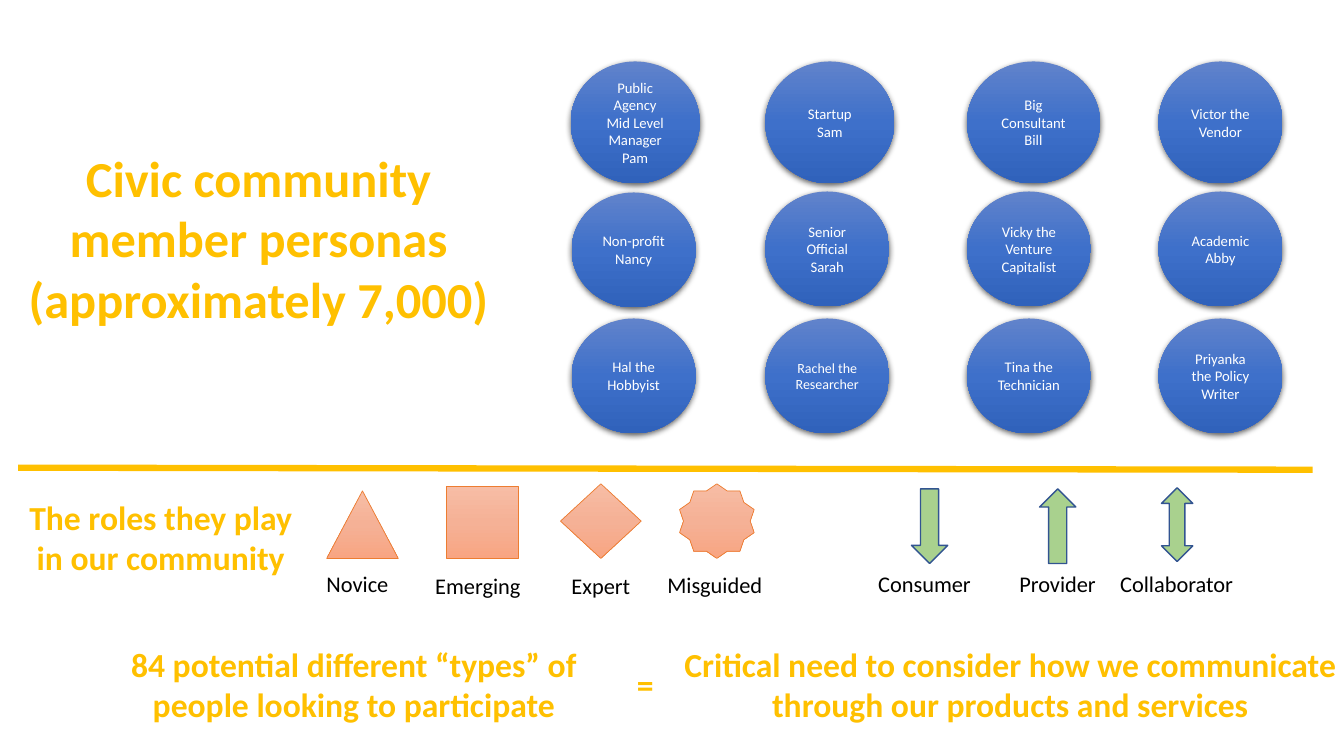
from copy import deepcopy
from dataclasses import dataclass

from lxml import etree
from pptx import Presentation
from pptx.dml.color import RGBColor
from pptx.enum.shapes import MSO_CONNECTOR, MSO_SHAPE
from pptx.enum.text import MSO_ANCHOR, MSO_AUTO_SIZE, PP_ALIGN
from pptx.oxml.ns import qn
from pptx.util import Inches, Pt

OVAL, STAR = MSO_SHAPE.OVAL, MSO_SHAPE.STAR_10_POINT
TRIANGLE, SQUARE, DIAMOND = MSO_SHAPE.ISOSCELES_TRIANGLE, MSO_SHAPE.RECTANGLE, MSO_SHAPE.DIAMOND
DOWN, BOTH = MSO_SHAPE.DOWN_ARROW, MSO_SHAPE.UP_DOWN_ARROW
STRAIGHT = MSO_CONNECTOR.STRAIGHT
CENTER, MIDDLE = PP_ALIGN.CENTER, MSO_ANCHOR.MIDDLE
GROW = MSO_AUTO_SIZE.SHAPE_TO_FIT_TEXT


@dataclass(frozen=True)
class Theme:
    font: str = "Calibri"
    gold: str = "FFC000"
    white: str = "FFFFFF"
    black: str = "000000"
    blues: tuple = ("6183CB", "3E70CA", "3062BB")
    peaches: tuple = ("F7BDA5", "F5B196", "F8A582")
    orange: str = "ED7D31"
    green: str = "A9D18E"
    navy: str = "325491"
    title: float = 36
    head: float = 24
    label: float = 16
    name: float = 10.5
    small: float = 10


theme = Theme()
deck = Presentation()
deck.slide_width, deck.slide_height = Inches(13.33), Inches(7.5)
slide = deck.slides.add_slide(deck.slide_layouts[6])


def write(shape, lines, size, color, bold=False):
    """Fill a shape with centred paragraphs, one per line."""
    frame = shape.text_frame
    frame.word_wrap = True
    for i, line in enumerate(lines):
        para = frame.add_paragraph() if i else frame.paragraphs[0]
        para.alignment = CENTER
        run = para.add_run()
        run.text = line
        font = run.font
        font.name, font.size, font.bold = theme.font, Pt(size), bold
        font.color.rgb = RGBColor.from_string(color)


def draw(kind, box, colors, edge=None, width=0):
    """Add a preset shape with a plain fill or a three-stop vertical gradient."""
    shape = slide.shapes.add_shape(kind, *map(Inches, box))
    shape.shadow.inherit = False
    if len(colors) == 1:
        shape.fill.solid()
        shape.fill.fore_color.rgb = RGBColor.from_string(colors[0])
    else:
        shape.fill.gradient()
        shape.fill.gradient_angle = 270
        first = shape.element.spPr.find(".//" + qn("a:gs"))
        first.addnext(deepcopy(first))
        for i, stop in enumerate(shape.fill.gradient_stops):
            stop.position = i / 2
            stop.color.rgb = RGBColor.from_string(colors[i])
    if edge:
        shape.line.color.rgb = RGBColor.from_string(edge)
        shape.line.width = Pt(width)
    else:
        shape.line.fill.background()
    return shape


# Personas: left, top, width, height, lines
top, mid, low = 0.61, 1.9, 3.16
tall, wide, high = 1.21, 1.23, 1.14
personas = [
    (5.66, top, 1.28, tall, ["Public Agency", "Mid Level Manager Pam"]),
    (7.59, top, 1.28, tall, ["Startup Sam"]),
    (9.59, top, 1.32, tall, ["Big Consultant Bill"]),
    (11.49, top, wide, tall, ["Victor the Vendor"]),
    (5.67, 1.91, wide, high, ["Non-profit Nancy"]),
    (7.59, mid, wide, high, ["Senior Official Sarah"]),
    (9.59, mid, wide, high, ["Vicky the Venture Capitalist"]),
    (11.49, mid, wide, high, ["Academic Abby"]),
    (5.67, low, wide, high, ["Hal the Hobbyist"]),
    (7.59, low, wide, high, ["Rachel the Researcher"]),
    (9.59, low, wide, high, ["Tina the Technician"]),
    (11.49, low, wide, high, ["Priyanka the Policy Writer"]),
]
for *box, lines in personas:
    oval = draw(OVAL, box, theme.blues)
    glow = etree.SubElement(
        oval.element.spPr.find(qn("a:effectLst")), qn("a:outerShdw"),
        blurRad=str(Pt(4.5)), dist=str(Pt(1.5)), dir="5400000", algn="ctr", rotWithShape="0")
    shade = etree.SubElement(glow, qn("a:srgbClr"), val=theme.black)
    etree.SubElement(shade, qn("a:alpha"), val="63000")
    oval.text_frame.vertical_anchor = MIDDLE
    size = theme.small if lines[0].startswith("Rachel") else theme.name
    write(oval, lines, size, theme.white)

# Divider
rule = slide.shapes.add_connector(STRAIGHT, *map(Inches, (13.02, 4.66, 0.18, 4.64)))
rule.line.color.rgb = RGBColor.from_string(theme.gold)
rule.line.width = Pt(4.5)
etree.SubElement(rule.element.spPr, qn("a:effectLst"))

# Role symbols
levels = [
    (TRIANGLE, (3.24, 4.87, 0.71, 0.67)),
    (SQUARE, (4.43, 4.83, 0.71, 0.71)),
    (DIAMOND, (5.56, 4.8, 0.8, 0.74)),
    (STAR, (6.74, 4.8, 0.74, 0.74)),
]
for kind, box in levels:
    draw(kind, box, theme.peaches, theme.orange, 0.5)

arrows = [
    (DOWN, (9.04, 4.85, 0.36, 0.74), 0),
    (DOWN, (10.31, 4.85, 0.36, 0.74), 180),
    (BOTH, (11.52, 4.84, 0.31, 0.73), 0),
]
for kind, box, turn in arrows:
    draw(kind, box, [theme.green], theme.navy, 1).rotation = turn

# Text: left, top, width, height, size, lines
heads = [
    (0.09, 1.41, 4.95, 1.92, theme.title,
     ["Civic community member personas", "(approximately 7,000)"]),
    (0.11, 4.88, 2.97, 0.91, theme.head, ["The roles they play in our community"]),
    (0.78, 6.34, 5.46, 0.91, theme.head,
     ["84 potential different “types” of people looking to participate"]),
    (6.13, 6.54, 0.54, 0.5, theme.head, ["="]),
    (6.63, 6.34, 6.78, 0.91, theme.head,
     ["Critical need to consider how we communicate through our products and services"]),
]
labels = [
    (3.1, 5.61, 0.89, "Novice"),
    (4.21, 5.63, 1.06, "Emerging"),
    (5.43, 5.63, 1.06, "Expert"),
    (6.51, 5.62, 1.16, "Misguided"),
    (8.59, 5.61, 1.16, "Consumer"),
    (9.91, 5.61, 1.16, "Provider"),
    (11, 5.61, 1.34, "Collaborator"),
]
texts = [(*head, theme.gold, True) for head in heads]
texts += [(x, y, w, 0.37, theme.label, [word], theme.black, False) for x, y, w, word in labels]
for x, y, w, h, size, lines, color, bold in texts:
    area = slide.shapes.add_textbox(*map(Inches, (x, y, w, h)))
    area.text_frame.auto_size = GROW
    write(area, lines, size, color, bold)

deck.save("out.pptx")
